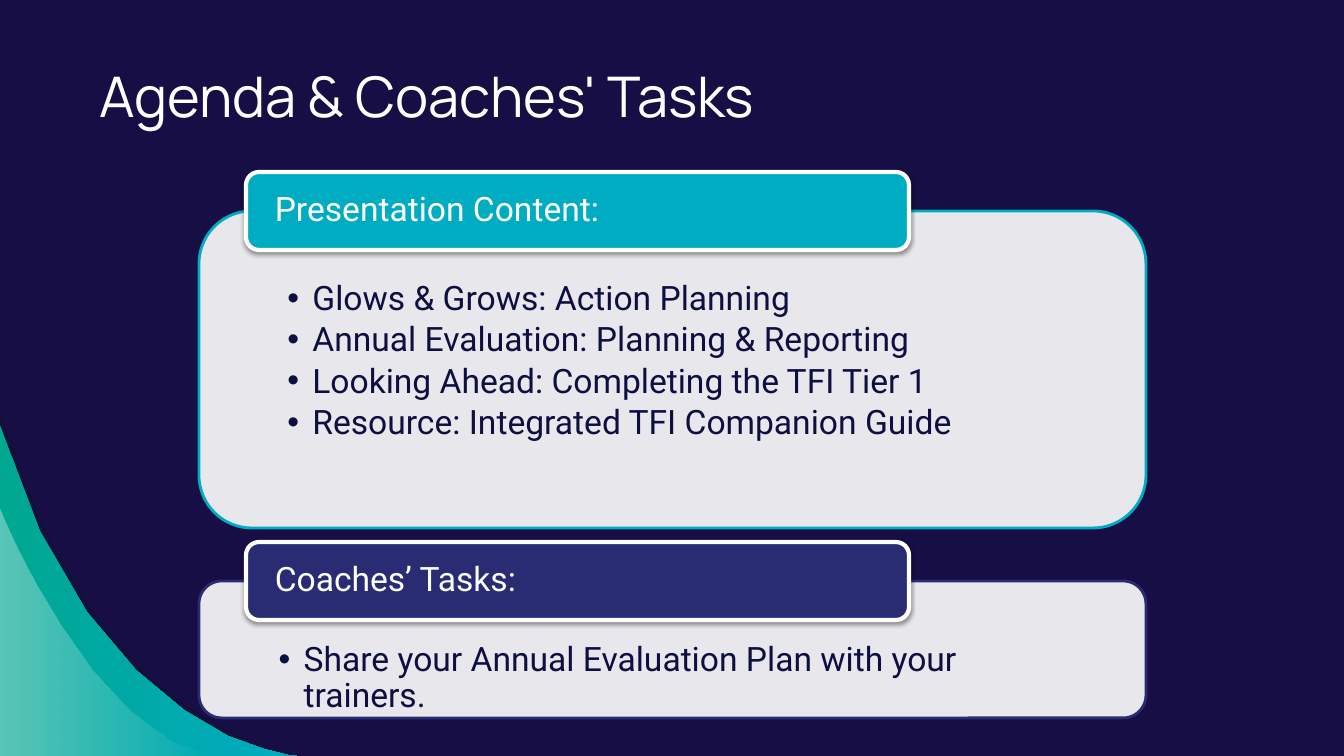
import pptx
import pptx.util
import pptx.dml.color
import pptx.enum.shapes
import pptx.enum.text
import pptx.oxml
import pptx.oxml.ns
from dataclasses import dataclass

# Content
TITLE = "Agenda & Coaches' Tasks"
CARDS = [  # heading, accent colour name, header top, card height, bullets
    ("Presentation Content:", "teal", 172, 317, [
        "Glows & Grows: Action Planning",
        "Annual Evaluation: Planning & Reporting",
        "Looking Ahead: Completing the TFI Tier 1",
        "Resource: Integrated TFI Companion Guide",
    ]),
    ("Coaches’ Tasks:", "indigo", 542, 137, [
        "Share your Annual Evaluation Plan with your trainers.",
    ]),
]
# Corner waves: four Bezier points, then (left colour, alpha %), (right colour, alpha %)
WAVES = [
    ([(0, 416), (99, 745), (305, 756), (305, 756)], ("shade", 54), ("shade", 54)),
    ([(0, 425), (96, 745), (297, 756), (297, 756)], ("green", 100), ("teal", 100)),
    ([(0, 510), (0, 510), (92, 741), (218, 756)], ("white", 36), ("white", 0)),
]


# Theme
@dataclass(frozen=True)
class Theme:
    night: str = "160E44"
    shade: str = "12102F"
    teal: str = "00ACC2"
    green: str = "00A791"
    indigo: str = "292C73"
    ink: str = "0D0F41"
    white: str = "FFFFFF"
    title_font: str = "Manrope"
    body_font: str = "Roboto"
    title_size: int = 40
    body_size: int = 24

    def rgb(self, name):
        return pptx.dml.color.RGBColor.from_string(getattr(self, name))


THEME = Theme()

# Layout, in px
W, H = 1344, 756
SCALE = 12192000 / W
CARD_X, CARD_W, CARD_DROP = 199, 947, 39
HEAD_X, HEAD_W, HEAD_H = 246, 663, 78
CARD_INSETS, HEAD_INSETS = (73, 55, 73, 19), (25, 0, 25, 0)
HANG = 25
CURVE_STEPS = 8


def px(n):
    return pptx.util.Emu(round(n * SCALE))


def set_alphas(sp, *percents):
    colours = sp._element.spPr.iter(pptx.oxml.ns.qn("a:srgbClr"))
    for colour, percent in zip(colours, percents):
        alpha = pptx.oxml.parse_xml(
            f'<a:alpha {pptx.oxml.ns.nsdecls("a")} val="{percent * 1000}"/>')
        colour.append(alpha)


def add_shadow(sp):
    effects = sp._element.spPr.find(pptx.oxml.ns.qn("a:effectLst"))
    effects.append(pptx.oxml.parse_xml(
        f'<a:outerShdw {pptx.oxml.ns.nsdecls("a")} blurRad="39370" dist="20320" '
        'dir="5400000" rotWithShape="0"><a:srgbClr val="000000">'
        '<a:alpha val="38000"/></a:srgbClr></a:outerShdw>'))


def add_bullet(p):
    pPr = p._p.get_or_add_pPr()
    pPr.set("marL", str(px(HANG)))
    pPr.set("indent", str(-px(HANG)))
    for tag in ('a:buFont {} typeface="Arial"', 'a:buChar {} char="•"'):
        pPr.append(pptx.oxml.parse_xml(f'<{tag.format(pptx.oxml.ns.nsdecls("a"))}/>'))


def add_run(p, text, font, size, colour):
    r = p.add_run()
    r.text = text
    r.font.name, r.font.size = font, pptx.util.Pt(size)
    r.font.color.rgb = THEME.rgb(colour)


def set_frame(tf, insets, anchor):
    tf.word_wrap = True
    tf.auto_size = pptx.enum.text.MSO_AUTO_SIZE.NONE
    tf.vertical_anchor = anchor
    tf.margin_left, tf.margin_top, tf.margin_right, tf.margin_bottom = map(px, insets)


def add_panel(s, box, fill, line, line_pt, lines, colour, insets, anchor, space_after):
    kind = pptx.enum.shapes.MSO_SHAPE.ROUNDED_RECTANGLE
    sp = s.shapes.add_shape(kind, *map(px, box))
    sp.shadow.inherit = False
    sp.fill.solid()
    sp.fill.fore_color.rgb = THEME.rgb(fill)
    sp.line.color.rgb = THEME.rgb(line)
    sp.line.width = pptx.util.Pt(line_pt)
    tf = sp.text_frame
    set_frame(tf, insets, anchor)
    for i, text in enumerate(lines):
        p = tf.add_paragraph() if i else tf.paragraphs[0]
        p.alignment = pptx.enum.text.PP_ALIGN.LEFT
        p.line_spacing = 0.9
        p.space_after = pptx.util.Pt(space_after)
        add_run(p, text, THEME.body_font, THEME.body_size, colour)
    return sp


def add_wave(s, curve, left, right):
    points = []
    for i in range(CURVE_STEPS + 1):
        t = i / CURVE_STEPS
        weights = ((1 - t) ** 3, 3 * t * (1 - t) ** 2, 3 * t * t * (1 - t), t ** 3)
        points.append(tuple(sum(w * c for w, c in zip(weights, axis))
                            for axis in zip(*curve)))
    builder = s.shapes.build_freeform(*points[0], scale=SCALE)
    builder.add_line_segments(points[1:] + [(0, H)], close=True)
    sp = builder.convert_to_shape()
    sp.shadow.inherit = False
    sp.line.fill.background()
    if left == right:
        sp.fill.solid()
        sp.fill.fore_color.rgb = THEME.rgb(left[0])
    else:
        sp.fill.gradient()
        sp.fill.gradient_angle = 0
        for stop, (name, _) in zip(sp.fill.gradient_stops, (left, right)):
            stop.color.rgb = THEME.rgb(name)
    set_alphas(sp, left[1], right[1])


def main():
    prs = pptx.Presentation()
    prs.slide_width, prs.slide_height = px(W), px(H)
    s = prs.slides.add_slide(prs.slide_layouts[5])
    s.background.fill.solid()
    s.background.fill.fore_color.rgb = THEME.rgb("night")
    top = pptx.enum.text.MSO_ANCHOR.TOP
    middle = pptx.enum.text.MSO_ANCHOR.MIDDLE

    # Corner waves
    for wave in WAVES:
        add_wave(s, *wave)

    # Cards with their overlapping headers
    for heading, accent, y, height, bullets in CARDS:
        card = add_panel(s, (CARD_X, y + CARD_DROP, CARD_W, height), "white", accent, 2,
                         bullets, "ink", CARD_INSETS, top, 3.6)
        set_alphas(card, 90)
        for p in card.text_frame.paragraphs:
            add_bullet(p)
        header = add_panel(s, (HEAD_X, y, HEAD_W, HEAD_H), accent, "white", 3,
                           [heading], "white", HEAD_INSETS, middle, 0)
        add_shadow(header)

    # Title
    title = s.shapes.title
    title.left, title.top, title.width, title.height = map(px, (89, 52, 1034, 93))
    set_frame(title.text_frame, (10, 10, 10, 10), top)
    p = title.text_frame.paragraphs[0]
    p.alignment = pptx.enum.text.PP_ALIGN.LEFT
    add_run(p, TITLE, THEME.title_font, THEME.title_size, "white")

    prs.save("out.pptx")


if __name__ == "__main__":
    main()
